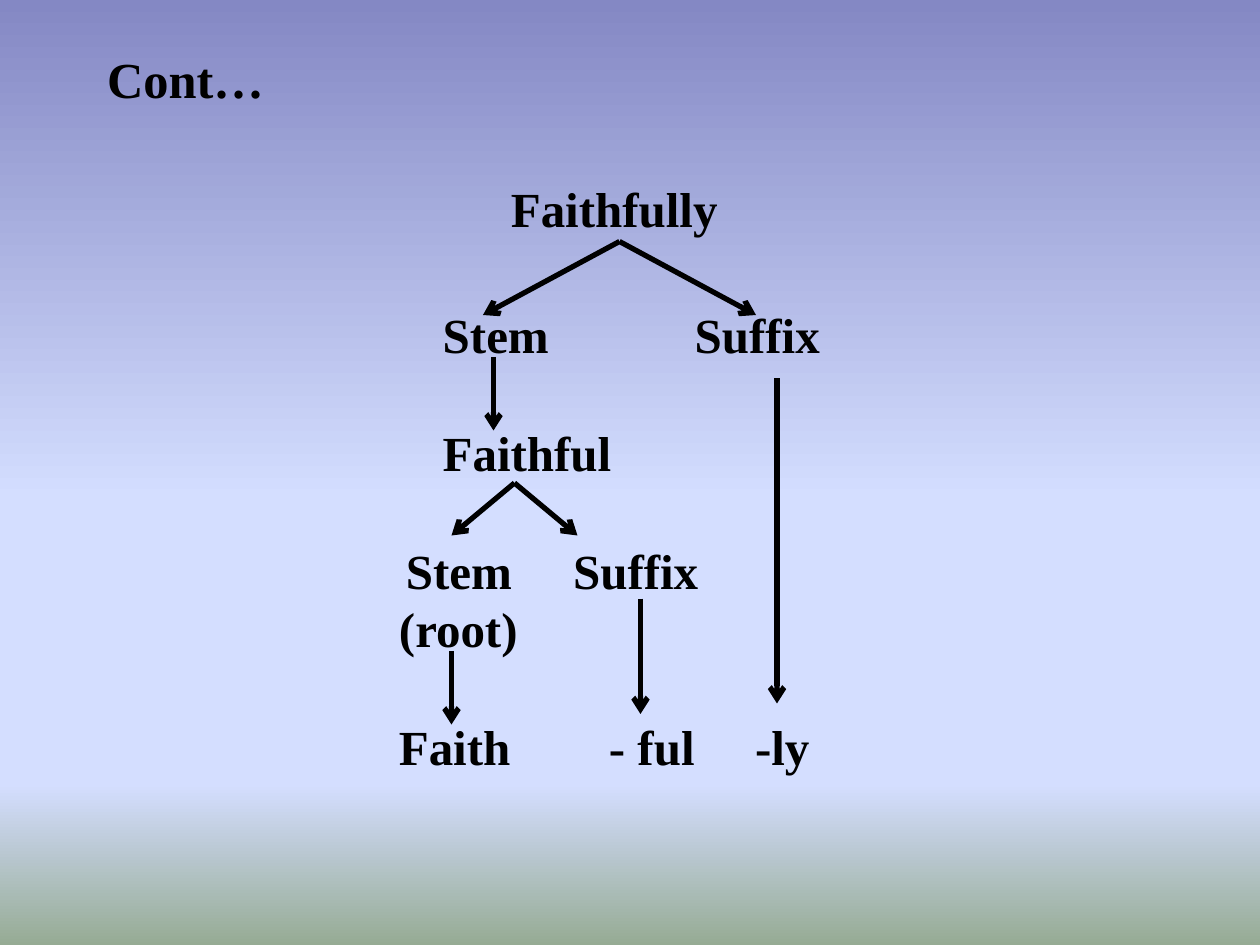
from lxml.etree import SubElement
from pptx import Presentation
from pptx.dml.color import RGBColor
from pptx.enum.shapes import MSO_CONNECTOR
from pptx.enum.text import MSO_ANCHOR
from pptx.oxml.ns import qn
from pptx.util import Pt

# Content: words as (text, tree row, left, width)
TITLE = "Cont…"
WORDS = [
    ("Faithfully", "word", 292, 124),
    ("Stem", "parts", 253, 68),
    ("Suffix", "parts", 397, 80),
    ("Faithful", "stem", 253, 104),
    ("Stem", "stem parts", 232, 68),
    ("Suffix", "stem parts", 327.5, 80),
    ("(root)", "root", 228, 76),
    ("Faith", "morphemes", 228, 72),
    ("- ful", "morphemes", 348, 56),
    ("-ly", "morphemes", 431.5, 40),
]

# Arrows: each start point with the points it leads to
ARROWS = [
    ((354, 138), [(276, 180), (432, 180)]),   # Faithfully -> Stem, Suffix
    ((294, 276), [(258, 306), (330, 306)]),   # Faithful -> Stem, Suffix
    ((282, 204), [(282, 246)]),               # Stem -> Faithful
    ((258, 372), [(258, 414)]),               # root -> Faith
    ((366, 342), [(366, 408)]),               # Suffix -> - ful
    ((444, 216), [(444, 402)]),               # Suffix -> -ly
]

THEME = {
    "ink": RGBColor.from_string("000000"),
    "sky": [(0, "8488C4"), (53, "D4DEFF"), (83, "D4DEFF"), (100, "96AB94")],
    "font": "Times New Roman",
    "title size": 28.8,
    "word size": 28,
    "arrow width": 3,
}

# Rows below the top word sit on an even line pitch
LINE_PITCH = 33.6
ROW_TOPS = {"word": 103}
for row, line in [("parts", 0), ("stem", 2), ("stem parts", 4), ("root", 5), ("morphemes", 7)]:
    ROW_TOPS[row] = 175 + line * LINE_PITCH


def paint_background(slide):
    fill = slide.background.fill
    fill.gradient()
    fill.gradient_angle = 270
    stops = slide.element.find(".//" + qn("a:gsLst"))
    for stop in list(stops):
        stops.remove(stop)
    for percent, color in THEME["sky"]:
        stop = SubElement(stops, qn("a:gs"), pos=str(percent * 1000))
        SubElement(stop, qn("a:srgbClr"), val=color)


def add_label(slide, text, left, top, width, height, size):
    label = slide.shapes.add_textbox(Pt(left), Pt(top), Pt(width), Pt(height))
    frame = label.text_frame
    frame_format = {
        "word_wrap": True, "vertical_anchor": MSO_ANCHOR.MIDDLE,
        "margin_left": 0, "margin_right": 0, "margin_top": 0, "margin_bottom": 0,
    }
    for name, value in frame_format.items():
        setattr(frame, name, value)
    run = frame.paragraphs[0].add_run()
    run.text = text
    for name, value in {"name": THEME["font"], "size": Pt(size), "bold": True}.items():
        setattr(run.font, name, value)
    run.font.color.rgb = THEME["ink"]


def add_arrow(slide, start, end):
    arrow = slide.shapes.add_connector(
        MSO_CONNECTOR.STRAIGHT, *(Pt(value) for value in (*start, *end)))
    arrow.line.color.rgb = THEME["ink"]
    arrow.line.width = Pt(THEME["arrow width"])
    SubElement(arrow.line._get_or_add_ln(), qn("a:tailEnd"), type="arrow")
    SubElement(arrow._element.spPr, qn("a:effectLst"))


def main():
    deck = Presentation()
    deck.slide_width, deck.slide_height = Pt(720), Pt(540)
    slide = deck.slides.add_slide(deck.slide_layouts[6])
    paint_background(slide)

    # Title
    add_label(slide, TITLE, 61.2, 24, 598, 42, THEME["title size"])

    # Word tree
    for text, row, left, width in WORDS:
        add_label(slide, text, left, ROW_TOPS[row], width, 32, THEME["word size"])

    # Arrows between the words
    for start, ends in ARROWS:
        for end in ends:
            add_arrow(slide, start, end)

    deck.save("out.pptx")


if __name__ == "__main__":
    main()
